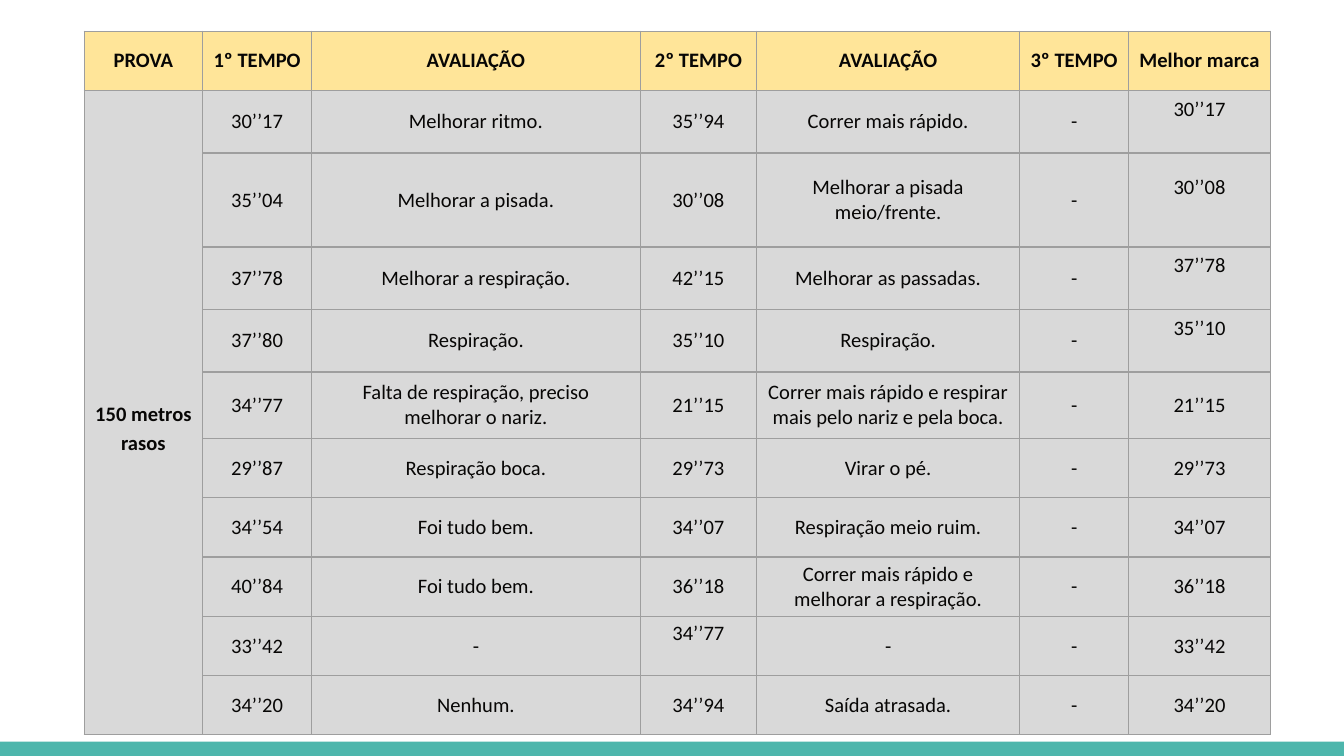
import dataclasses

import lxml.etree
import pptx
import pptx.dml.color
import pptx.enum.shapes
import pptx.enum.text
import pptx.oxml.ns
import pptx.util
from pptx.util import Cm


@dataclasses.dataclass(frozen=True)
class Theme:
    font: str = "Calibri"
    size: int = 11
    ink: str = "070605"
    header: str = "FFE599"
    body: str = "D9D9D9"
    border: str = "9E9E9E"
    accent: str = "4DB6AC"


theme = Theme()


def rgb(value):
    return pptx.dml.color.RGBColor.from_string(value)


def write_cell(cell, text, *, fill=theme.body, bold=False, top=0, bottom=0, spacing=None):
    cell.fill.solid()
    cell.fill.fore_color.rgb = rgb(fill)
    cell.vertical_anchor = pptx.enum.text.MSO_ANCHOR.MIDDLE
    cell.margin_left = cell.margin_right = Cm(0.19)
    cell.margin_top, cell.margin_bottom = Cm(top), Cm(bottom)
    paragraph = cell.text_frame.paragraphs[0]
    paragraph.alignment = pptx.enum.text.PP_ALIGN.CENTER
    if spacing:
        paragraph.line_spacing = spacing
    run = paragraph.add_run()
    run.text = text
    run.font.name = theme.font
    run.font.size = pptx.util.Pt(theme.size)
    run.font.bold = bold
    run.font.color.rgb = rgb(theme.ink)


presentation = pptx.Presentation()
presentation.slide_width = Cm(25.4)
presentation.slide_height = Cm(14.29)
slide = presentation.slides.add_slide(presentation.slide_layouts[6])

footer_band = slide.shapes.add_shape(
    pptx.enum.shapes.MSO_SHAPE.RECTANGLE, Cm(0), Cm(14.02), Cm(25.4), Cm(0.27)
)
footer_band.shadow.inherit = False
footer_band.fill.solid()
footer_band.fill.fore_color.rgb = rgb(theme.accent)
footer_band.line.fill.background()

headings = ["PROVA", "1º TEMPO", "AVALIAÇÃO", "2º TEMPO", "AVALIAÇÃO", "3º TEMPO", "Melhor marca"]
attempts = [
    ("30’’17", "Melhorar ritmo.", "35’’94", "Correr mais rápido.", "-", "30’’17"),
    ("35’’04", "Melhorar a pisada.", "30’’08", "Melhorar a pisada meio/frente.", "-", "30’’08"),
    ("37’’78", "Melhorar a respiração.", "42’’15", "Melhorar as passadas.", "-", "37’’78"),
    ("37’’80", "Respiração.", "35’’10", "Respiração.", "-", "35’’10"),
    ("34’’77", "Falta de respiração, preciso melhorar o nariz.", "21’’15",
     "Correr mais rápido e respirar mais pelo nariz e pela boca.", "-", "21’’15"),
    ("29’’87", "Respiração boca.", "29’’73", "Virar o pé.", "-", "29’’73"),
    ("34’’54", "Foi tudo bem.", "34’’07", "Respiração meio ruim.", "-", "34’’07"),
    ("40’’84", "Foi tudo bem.", "36’’18", "Correr mais rápido e melhorar a respiração.", "-", "36’’18"),
    ("33’’42", "-", "34’’77", "-", "-", "33’’42"),
    ("34’’20", "Nenhum.", "34’’94", "Saída atrasada.", "-", "34’’20"),
]
raised_cells = {(1, 6), (2, 6), (3, 6), (4, 6), (9, 3)}
column_widths = [2.24, 2.06, 6.21, 2.2, 4.97, 2.06, 2.68]
row_heights = [1.12, 1.18, 1.78, 1.18, 1.18, 1.26] + [1.12] * 5

results = slide.shapes.add_table(
    len(row_heights), len(column_widths), Cm(1.59), Cm(0.59),
    Cm(sum(column_widths)), Cm(sum(row_heights)),
).table
results.first_row = False
results.horz_banding = False
for column, width in zip(results.columns, column_widths):
    column.width = Cm(width)
for row, height in zip(results.rows, row_heights):
    row.height = Cm(height)

for column_index, heading in enumerate(headings):
    write_cell(results.cell(0, column_index), heading, fill=theme.header, bold=True)

event = results.cell(1, 0)
event.merge(results.cell(len(attempts), 0))
write_cell(event, "150 metros rasos", bold=True, top=0.54, spacing=1.15)

for row_index, attempt in enumerate(attempts, 1):
    for column_index, entry in enumerate(attempt, 1):
        lift = 0.47 if (row_index, column_index) in raised_cells else 0
        write_cell(results.cell(row_index, column_index), entry, bottom=lift)

qn = pptx.oxml.ns.qn
for cell in results.iter_cells():
    properties = cell._tc.get_or_add_tcPr()
    for position, side in enumerate(("a:lnL", "a:lnR", "a:lnT", "a:lnB")):
        border = lxml.etree.Element(qn(side), w=str(pptx.util.Pt(0.75)))
        border_fill = lxml.etree.SubElement(border, qn("a:solidFill"))
        lxml.etree.SubElement(border_fill, qn("a:srgbClr"), val=theme.border)
        properties.insert(position, border)

presentation.save("out.pptx")
